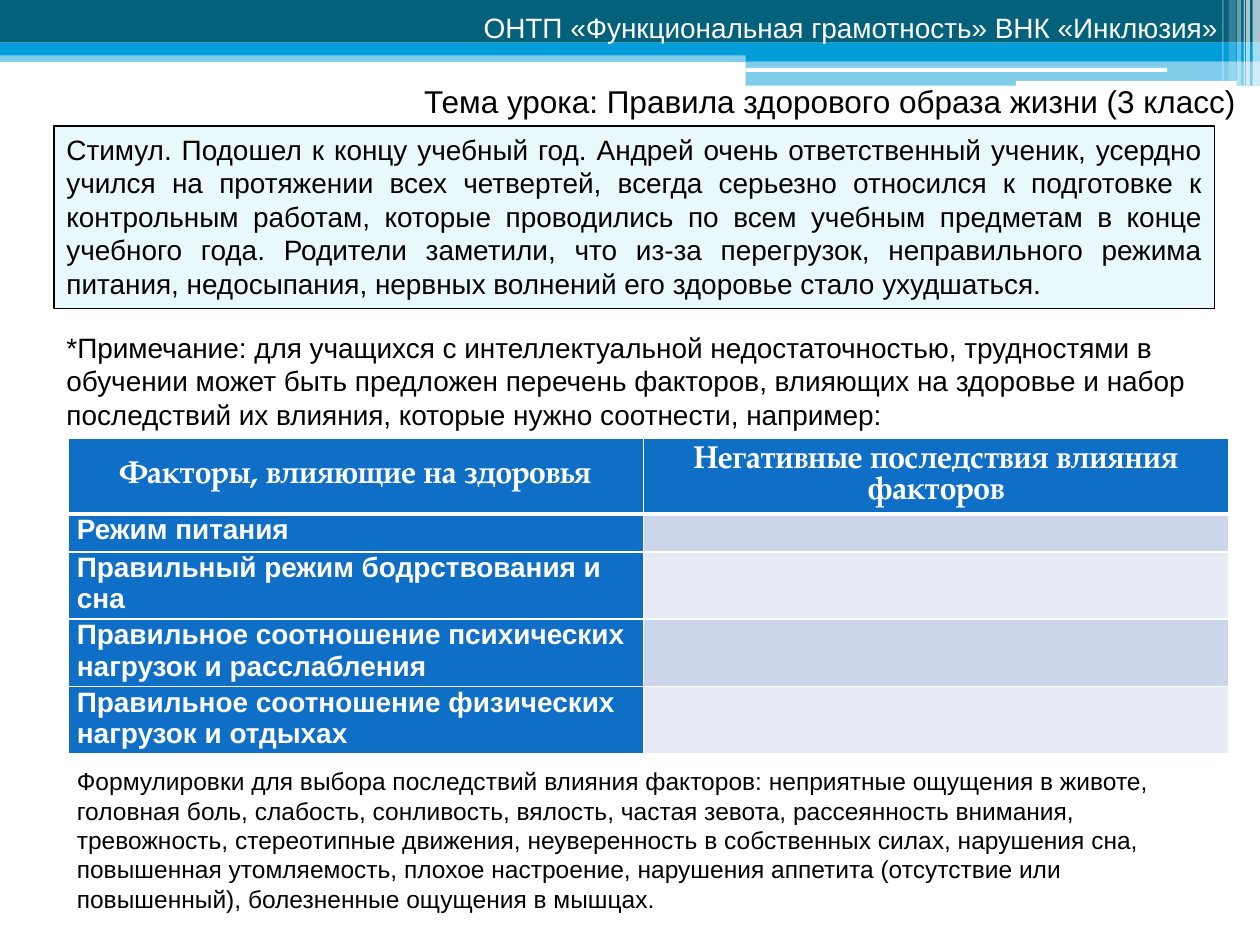
from dataclasses import dataclass

from lxml import etree
from pptx import Presentation
from pptx.dml.color import RGBColor
from pptx.enum.shapes import MSO_SHAPE
from pptx.enum.text import MSO_ANCHOR, MSO_AUTO_SIZE, PP_ALIGN
from pptx.oxml.ns import qn
from pptx.util import Cm, Pt

RECTANGLE = MSO_SHAPE.RECTANGLE
ROUNDED = MSO_SHAPE.ROUNDED_RECTANGLE
LEFT, CENTER, RIGHT, JUSTIFY = PP_ALIGN.LEFT, PP_ALIGN.CENTER, PP_ALIGN.RIGHT, PP_ALIGN.JUSTIFY
TOP, MIDDLE = MSO_ANCHOR.TOP, MSO_ANCHOR.MIDDLE
NO_AUTOFIT = MSO_AUTO_SIZE.NONE
TITLE_ONLY = 5


@dataclass(frozen=True)
class Theme:
    font: str = "Arial"
    serif: str = "TeX Gyre Pagella"
    white: str = "FFFFFF"
    black: str = "000000"
    teal: str = "04617B"
    sky: str = "009DD9"
    pale: str = "E9F9FB"
    blue: str = "0F6FC6"
    bands: tuple = ("CCD5EA", "E7EBF5")
    large: int = 18
    body: int = 16
    small: int = 14


THEME = Theme()

HEADING = "ОНТП «Функциональная грамотность» ВНК «Инклюзия»"
TITLE = "Тема урока: Правила здорового образа жизни (3 класс)"
STIMULUS = (
    "Стимул. Подошел к концу учебный год. Андрей очень ответственный ученик, "
    "усердно учился на протяжении всех четвертей, всегда серьезно относился к "
    "подготовке к контрольным работам, которые проводились по всем учебным "
    "предметам в конце учебного года. Родители заметили, что из-за перегрузок, "
    "неправильного режима питания, недосыпания, нервных волнений его здоровье "
    "стало ухудшаться."
)
NOTE = (
    "*Примечание: для учащихся с интеллектуальной недостаточностью, трудностями в "
    "обучении может быть предложен перечень факторов, влияющих на здоровье и набор "
    "последствий их влияния, которые нужно соотнести, например:"
)
COLUMN_HEADINGS = ("Факторы, влияющие на здоровья", "Негативные последствия влияния факторов")
FACTORS = (
    "Режим питания",
    "Правильный режим бодрствования и сна",
    "Правильное соотношение психических нагрузок и расслабления",
    "Правильное соотношение физических нагрузок и отдыхах",
)
CONSEQUENCES = (
    "Формулировки для выбора последствий влияния факторов: неприятные ощущения в "
    "животе, головная боль, слабость, сонливость, вялость, частая зевота, "
    "рассеянность внимания, тревожность, стереотипные движения, неуверенность в "
    "собственных силах, нарушения сна, повышенная утомляемость, плохое настроение, "
    "нарушения аппетита (отсутствие или повышенный), болезненные ощущения в мышцах."
)


def color(value):
    return RGBColor.from_string(value)


def write(text_frame, text, size, ink=THEME.black, font=THEME.font, bold=False, align=LEFT):
    text_frame.text = text
    paragraph = text_frame.paragraphs[0]
    paragraph.alignment = align
    for run in paragraph.runs:
        run.font.size = Pt(size)
        run.font.name = font
        run.font.bold = bold
        run.font.color.rgb = color(ink)


def add_block(slide, kind, box, fill, opacity=100):
    shape = slide.shapes.add_shape(kind, *map(Cm, box))
    shape.shadow.inherit = False
    shape.fill.solid()
    shape.fill.fore_color.rgb = color(fill)
    shape.line.fill.background()
    if opacity < 100:
        tint = shape.fill._xPr.find(qn("a:solidFill"))[0]
        etree.SubElement(tint, qn("a:alpha"), val=str(opacity * 1000))
    return shape


def add_text(slide, box, text, size, ink=THEME.black, wrap=True):
    text_box = slide.shapes.add_textbox(*map(Cm, box))
    text_box.text_frame.word_wrap = wrap
    write(text_box.text_frame, text, size, ink)


def add_header(slide, box):
    left, top, width, height = box
    tab = 15.03
    bars = (
        (RECTANGLE, 0, 1.02, width, 0.23, THEME.sky, 50),
        (RECTANGLE, 0, 0, width, 0.86, THEME.teal, 100),
        (RECTANGLE, 0, 0.86, width, 0.26, THEME.sky, 100),
        (RECTANGLE, tab, 0.98, width - tab, 0.25, THEME.sky, 100),
        (RECTANGLE, tab, 1.23, width - tab, height - 1.23, THEME.sky, 50),
        (ROUNDED, tab, 1.37, 8.5, 0.08, THEME.white, 100),
        (ROUNDED, 20.48, 1.63, 4.45, 0.1, THEME.white, 100),
    )
    for kind, x, y, bar_width, bar_height, fill, opacity in bars:
        add_block(slide, kind, (left + x, top + y, bar_width, bar_height), fill, opacity)
    stripes = (
        (25.25, 0.15, height, 65),
        (25.12, 0.08, height, 65),
        (25.07, 0.03, height, 60),
        (24.94, 0.08, height, 40),
        (24.77, 0.15, height - 0.1, 20),
        (24.64, 0.03, height - 0.1, 30),
    )
    for x, stripe_width, stripe_height, opacity in stripes:
        stripe = (left + x, top, stripe_width, stripe_height)
        add_block(slide, RECTANGLE, stripe, THEME.white, opacity)
    add_text(slide, (left + 9.5, top + 0.08, 15.67, 0.94), HEADING, THEME.body, THEME.white, False)


def place_title(slide, box):
    title = slide.shapes.title
    title.left, title.top, title.width, title.height = map(Cm, box)
    text_frame = title.text_frame
    text_frame.auto_size = NO_AUTOFIT
    text_frame.word_wrap = True
    text_frame.vertical_anchor = TOP
    write(text_frame, TITLE, THEME.large, align=RIGHT)
    slide.shapes._spTree.append(title._element)


def add_stimulus(slide, box):
    panel = add_block(slide, RECTANGLE, box, THEME.pale)
    panel.line.color.rgb = color(THEME.black)
    panel.line.width = Pt(0)
    panel.text_frame.word_wrap = True
    panel.text_frame.vertical_anchor = TOP
    write(panel.text_frame, STIMULUS, THEME.body, align=JUSTIFY)


def add_borders(cell, widths):
    properties = cell._tc.get_or_add_tcPr()
    for side, width in zip("LRTB", widths):
        line = etree.SubElement(properties, qn(f"a:ln{side}"), w=str(Pt(width)))
        fill = etree.SubElement(line, qn("a:solidFill"))
        etree.SubElement(fill, qn("a:srgbClr"), val=THEME.white)


def add_factor_table(slide, box):
    rows = [COLUMN_HEADINGS] + [(factor, "") for factor in FACTORS]
    table = slide.shapes.add_table(len(rows), 2, *map(Cm, box)).table
    for column, width in zip(table.columns, (11.6, box[2] - 11.6)):
        column.width = Cm(width)
    for row, height in zip(table.rows, (1.52, 0.64, 1.36, 1.36, 1.36)):
        row.height = Cm(height)
    for i, texts in enumerate(rows):
        heading = i == 0
        for j, text in enumerate(texts):
            cell = table.cell(i, j)
            add_borders(cell, (1, 1, 3 if i == 1 else 1, 3 if heading else 1))
            cell.fill.solid()
            solid = heading or j == 0
            cell.fill.fore_color.rgb = color(THEME.blue if solid else THEME.bands[(i - 1) % 2])
            cell.margin_left = cell.margin_right = Cm(0.18)
            cell.margin_top = cell.margin_bottom = 0
            cell.vertical_anchor = MIDDLE if heading else TOP
            write(
                cell.text_frame, text,
                THEME.large if heading else THEME.body,
                THEME.white,
                THEME.serif if heading else THEME.font,
                True,
                CENTER if heading else LEFT,
            )
            cell.text_frame.paragraphs[0].line_spacing = Pt(18)


def main():
    presentation = Presentation()
    presentation.slide_width, presentation.slide_height = Cm(25.4), Cm(19.05)
    slide = presentation.slides.add_slide(presentation.slide_layouts[TITLE_ONLY])
    add_header(slide, (0, 0, 25.4, 1.73))
    place_title(slide, (4.17, 1.52, 21, 1.02))
    add_stimulus(slide, (1.09, 2.54, 23.4, 3.68))
    add_text(slide, (1.09, 6.53, 23.6, 2.31), NOTE, THEME.body)
    add_factor_table(slide, (1.37, 8.84, 23.4, 6.24))
    add_text(slide, (1.3, 15.32, 23.6, 3.25), CONSEQUENCES, THEME.small)
    presentation.save("out.pptx")


if __name__ == "__main__":
    main()
